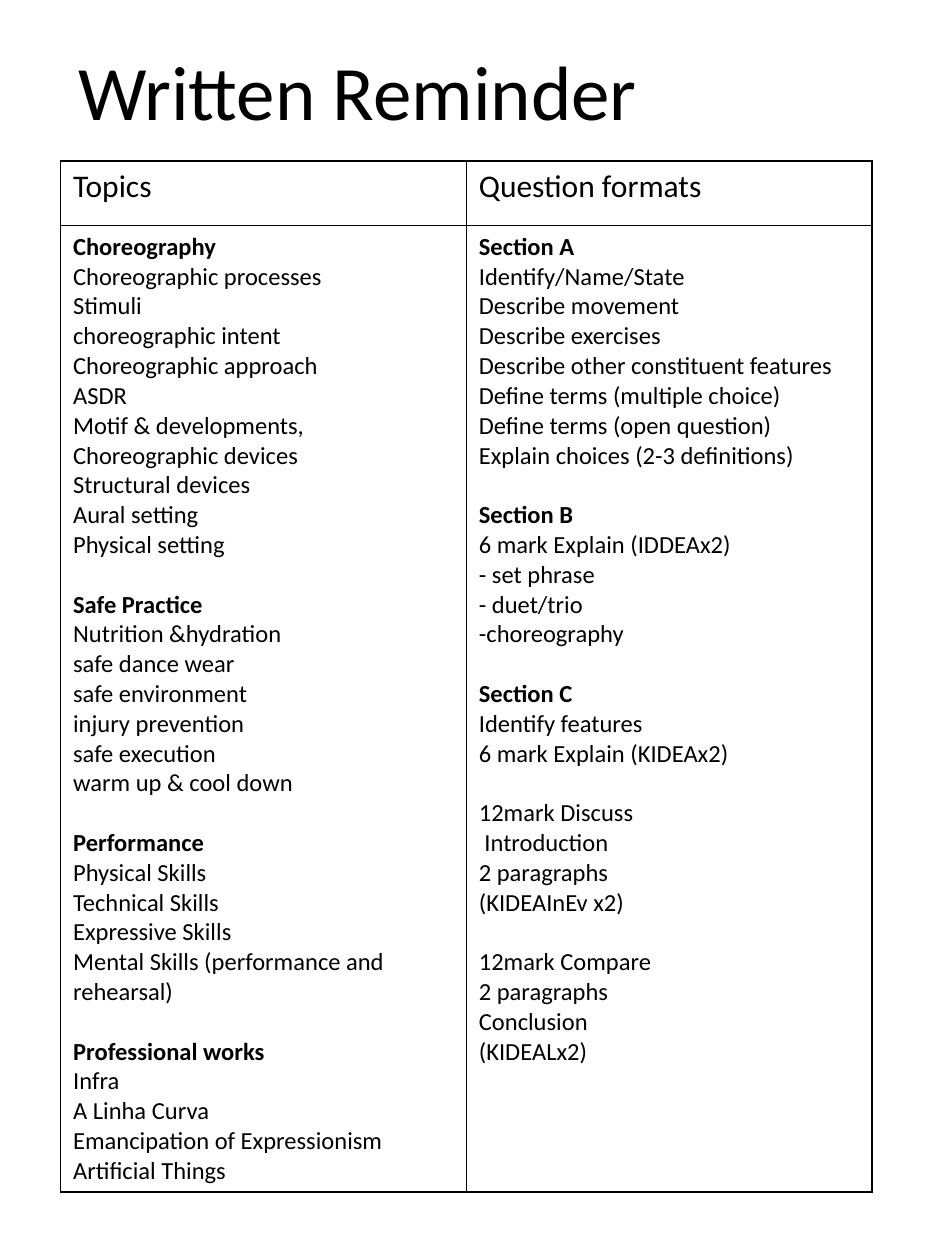
from lxml import etree
from pptx import Presentation
from pptx import util as u
from pptx.dml.color import RGBColor
from pptx.enum import text
from pptx.oxml.ns import qn

BLACK = RGBColor(0x00, 0x00, 0x00)
FONT = "Calibri"
BODY_SIZE = 14
BLOCK_GAP = 17  # one body line, in points

# Each block is (heading or None, lines)
TOPICS = [
    ("Choreography", [
        "Choreographic processes", "Stimuli", "choreographic intent",
        "Choreographic approach", "ASDR",
        "Motif & developments, Choreographic devices",
        "Structural devices", "Aural setting", "Physical setting"]),
    ("Safe Practice", [
        "Nutrition &hydration", "safe dance wear", "safe environment",
        "injury prevention", "safe execution", "warm up & cool down"]),
    ("Performance", [
        "Physical Skills", "Technical Skills\nExpressive Skills",
        "Mental Skills (performance and rehearsal)"]),
    ("Professional works", [
        "Infra", "A Linha Curva", "Emancipation of Expressionism",
        "Artificial Things"]),
]
QUESTIONS = [
    ("Section A", [
        "Identify/Name/State", "Describe movement", "Describe exercises",
        "Describe other constituent features",
        "Define terms (multiple choice)", "Define terms (open question)",
        "Explain choices (2-3 definitions)"]),
    ("Section B", [
        "6 mark Explain (IDDEAx2)", "- set phrase", "- duet/trio",
        "-choreography"]),
    ("Section C", ["Identify features", "6 mark Explain (KIDEAx2)"]),
    (None, ["12mark Discuss", " Introduction", "2 paragraphs",
            "(KIDEAInEv x2)"]),
    (None, ["12mark Compare", "2 paragraphs", "Conclusion", "(KIDEALx2)"]),
]


def write(p, words, size, bold=False):
    p.text = words
    for r in p.runs:
        r.font.name = FONT
        r.font.size = u.Pt(size)
        r.font.bold = bold
        r.font.color.rgb = BLACK


def add_title(s, words):
    sp = s.shapes.title
    sp.left, sp.top = u.Cm(1.32), u.Cm(-0.53)
    sp.width, sp.height = u.Cm(16.43), u.Cm(4.9)
    tf = sp.text_frame
    tf.word_wrap = True
    tf.vertical_anchor = text.MSO_ANCHOR.MIDDLE
    p = tf.paragraphs[0]
    write(p, words, 44)
    p.alignment = text.PP_ALIGN.LEFT
    p.line_spacing = 0.9


def style_cell(cell):
    """Thin black border on every side, no fill."""
    tcPr = cell._tc.get_or_add_tcPr()
    for side in ("a:lnL", "a:lnR", "a:lnT", "a:lnB"):
        ln = etree.SubElement(tcPr, qn(side), w=str(u.Pt(1)))
        fill = etree.SubElement(ln, qn("a:solidFill"))
        etree.SubElement(fill, qn("a:srgbClr"), val=str(BLACK))
    cell.fill.background()


def fill_blocks(cell, blocks):
    tf = cell.text_frame
    p = tf.paragraphs[0]
    for i, (heading, lines) in enumerate(blocks):
        entries = [(line, False) for line in lines]
        if heading:
            entries.insert(0, (heading, True))
        for j, (words, bold) in enumerate(entries):
            if i or j:
                p = tf.add_paragraph()
            if i and j == 0:
                p.space_before = u.Pt(BLOCK_GAP)
            write(p, words, BODY_SIZE, bold)


def add_reminder_table(s, columns):
    col_width, row_heights = u.Cm(8.18), (u.Cm(1.3), u.Cm(19.48))
    table = s.shapes.add_table(
        2, len(columns), u.Cm(1.22), u.Cm(3.25),
        col_width * len(columns), sum(row_heights)).table
    table.first_row = table.horz_banding = False
    for row, height in zip(table.rows, row_heights):
        row.height = height
    for c, (header, blocks) in enumerate(columns):
        table.columns[c].width = col_width
        write(table.cell(0, c).text_frame.paragraphs[0], header, 18)
        fill_blocks(table.cell(1, c), blocks)
    for cell in table.iter_cells():
        style_cell(cell)


def main():
    prs = Presentation()
    prs.slide_width, prs.slide_height = u.Cm(19.05), u.Cm(25.4)
    s = prs.slides.add_slide(prs.slide_layouts[5])
    add_title(s, "Written Reminder")
    add_reminder_table(s, [("Topics", TOPICS), ("Question formats", QUESTIONS)])
    prs.save("out.pptx")


if __name__ == "__main__":
    main()
